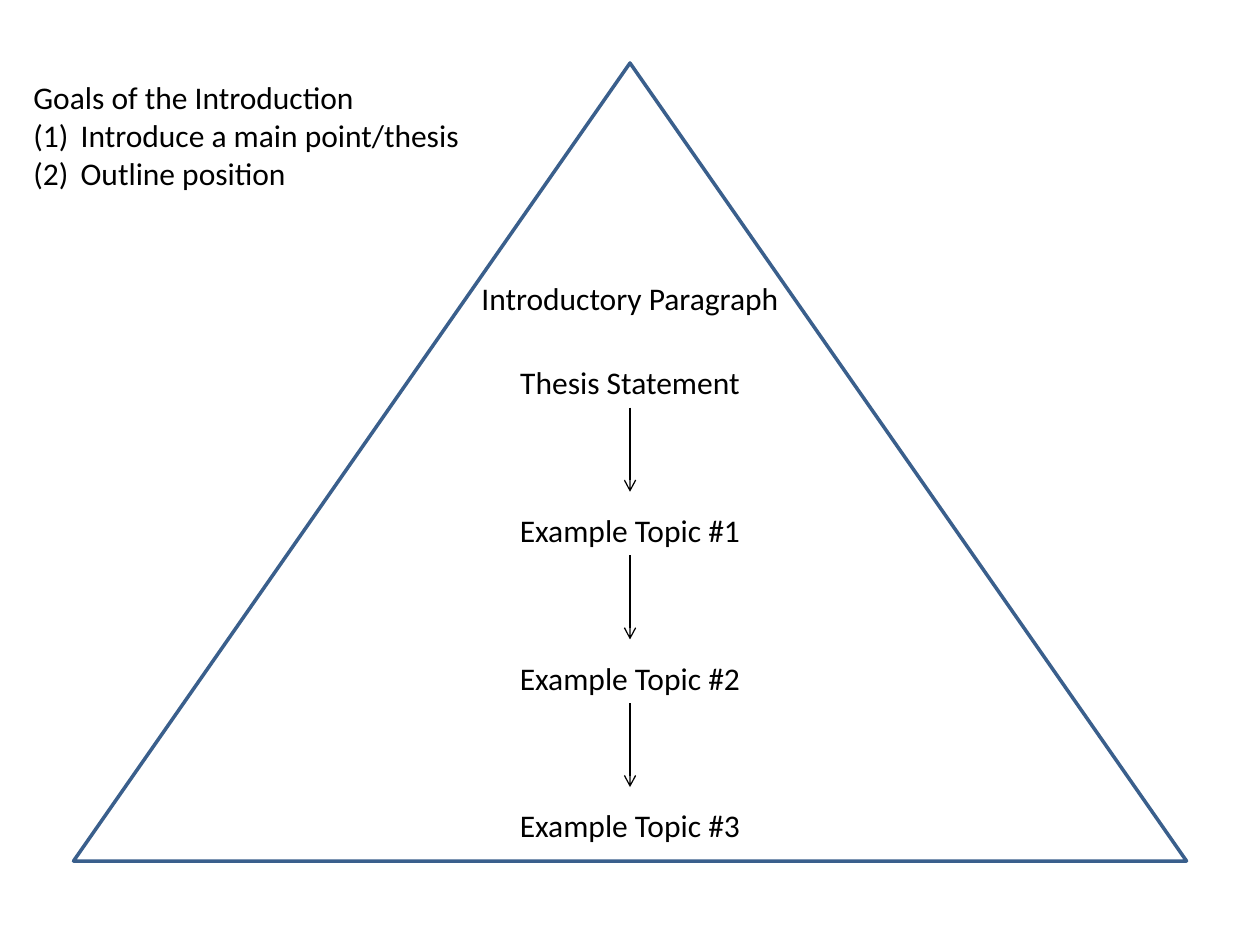
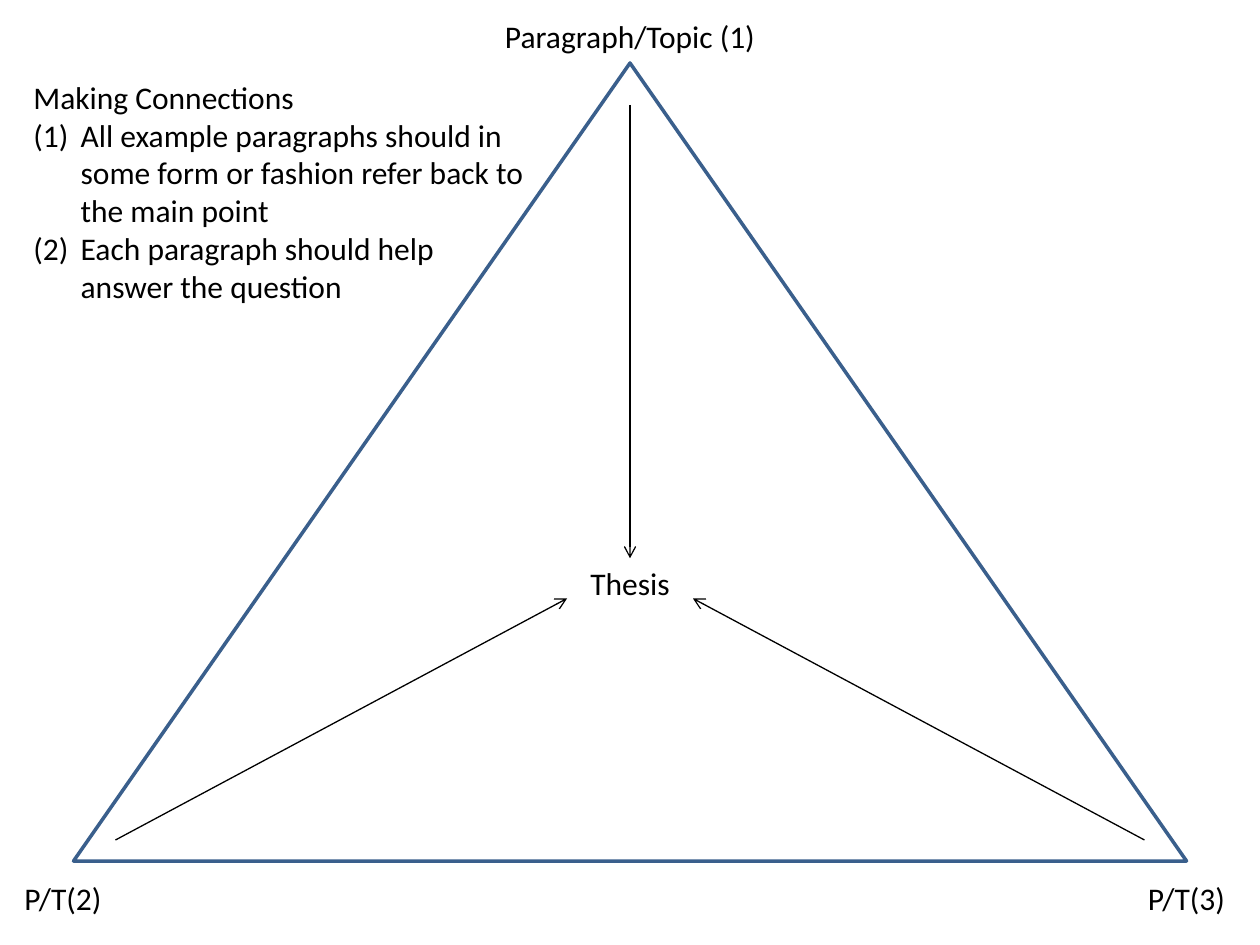
from dataclasses import dataclass

from lxml.etree import SubElement
from pptx import Presentation
from pptx.dml.color import RGBColor
from pptx.enum.shapes import MSO_CONNECTOR, MSO_SHAPE
from pptx.enum.text import MSO_AUTO_SIZE, PP_ALIGN
from pptx.oxml.ns import qn
from pptx.shapes.autoshape import Shape
from pptx.shapes.connector import Connector
from pptx.slide import Slide
from pptx.util import Pt


@dataclass(frozen=True)
class Theme:
    font: str = "Calibri"
    size: float = 18
    ink: RGBColor = RGBColor(0x00, 0x00, 0x00)
    outline: RGBColor = RGBColor(0x3A, 0x5F, 0x8C)
    outline_width: float = 2
    arrow_width: float = 0.75
    number_indent: float = 27


@dataclass(frozen=True)
class Label:
    text: str
    centre: float
    top: float
    width: float


@dataclass(frozen=True)
class Notes:
    heading: str
    points: tuple[str, ...]
    width: float
    height: float


THEME = Theme()
WIDTH, HEIGHT = 720, 540
CENTRE = WIDTH / 2
LABEL_HEIGHT = 29
TOP_SIDE, BOTTOM_SIDE = 0, 2

# Slide 1: steps down the middle of the triangle
STEPS = ("Thesis Statement", "Example Topic #1", "Example Topic #2", "Example Topic #3")
STEP_TOP, STEP_GAP, STEP_WIDTH = 204, 84.4, 228
STEP_ARROW = 48
INTRO = Label("Introductory Paragraph", CENTRE, 156, STEP_WIDTH)
GOALS = Notes("Goals of the Introduction",
              ("Introduce a main point/thesis", "Outline position"), 276, 73)

# Slide 2: corners pointing at the thesis
THESIS = Label("Thesis", CENTRE, 319, 96)
CORNERS = (
    Label("Paragraph/Topic (1)", CENTRE, 6, 204),
    Label("P/T(2)", 36, 499, 72),
    Label("P/T(3)", 678, 498.5, 72),
)
CONNECTIONS = Notes("Making Connections",
                    ("All example paragraphs should in some form or fashion "
                     "refer back to the main point",
                     "Each paragraph should help answer the question"), 300, 138)


def add_text(s: Slide, paragraphs: tuple[str, ...], left: float, top: float,
             width: float, height: float, *, align: PP_ALIGN = PP_ALIGN.LEFT,
             numbered_from: int | None = None) -> Shape:
    """Add a text box; paragraphs from index numbered_from on are numbered."""
    sp = s.shapes.add_textbox(Pt(left), Pt(top), Pt(width), Pt(height))
    tf = sp.text_frame
    tf.word_wrap = True
    tf.auto_size = MSO_AUTO_SIZE.SHAPE_TO_FIT_TEXT
    for i, text in enumerate(paragraphs):
        p = tf.paragraphs[0] if i == 0 else tf.add_paragraph()
        p.alignment = align
        r = p.add_run()
        r.text = text
        r.font.name = THEME.font
        r.font.size = Pt(THEME.size)
        r.font.color.rgb = THEME.ink
        if numbered_from is not None and i >= numbered_from:
            pPr = p._p.get_or_add_pPr()
            pPr.set("marL", str(Pt(THEME.number_indent)))
            pPr.set("indent", str(-Pt(THEME.number_indent)))
            SubElement(pPr, qn("a:buFont"), typeface="+mj-lt")
            SubElement(pPr, qn("a:buAutoNum"), type="arabicParenBoth")
    return sp


def add_label(s: Slide, label: Label) -> Shape:
    return add_text(s, (label.text,), label.centre - label.width / 2, label.top,
                    label.width, LABEL_HEIGHT, align=PP_ALIGN.CENTER)


def add_notes(s: Slide, notes: Notes) -> Shape:
    return add_text(s, (notes.heading, *notes.points), 12, 41,
                    notes.width, notes.height, numbered_from=1)


def add_arrow(s: Slide, x1: float, y1: float, x2: float, y2: float) -> Connector:
    line = s.shapes.add_connector(MSO_CONNECTOR.STRAIGHT, Pt(x1), Pt(y1), Pt(x2), Pt(y2))
    line.line.color.rgb = THEME.ink
    line.line.width = Pt(THEME.arrow_width)
    SubElement(line.line._get_or_add_ln(), qn("a:tailEnd"), type="arrow")
    SubElement(line._element.spPr, qn("a:effectLst"))
    return line


def add_triangle_slide(prs: Presentation) -> Slide:
    """Add a blank slide with the large triangle that both slides share."""
    s = prs.slides.add_slide(prs.slide_layouts[6])
    sp = s.shapes.add_shape(MSO_SHAPE.ISOSCELES_TRIANGLE, Pt(42), Pt(36), Pt(636), Pt(456))
    sp.shadow.inherit = False
    sp.fill.background()
    sp.line.color.rgb = THEME.outline
    sp.line.width = Pt(THEME.outline_width)
    return s


def build_introduction(prs: Presentation) -> None:
    s = add_triangle_slide(prs)
    add_label(s, INTRO)
    for i, text in enumerate(STEPS):
        top = STEP_TOP + i * STEP_GAP
        step = add_label(s, Label(text, CENTRE, top, STEP_WIDTH))
        if i < len(STEPS) - 1:
            bottom = top + LABEL_HEIGHT
            arrow = add_arrow(s, CENTRE, bottom, CENTRE, bottom + STEP_ARROW)
            arrow.begin_connect(step, BOTTOM_SIDE)
    add_notes(s, GOALS)


def build_connections(prs: Presentation) -> None:
    s = add_triangle_slide(prs)
    thesis = add_label(s, THESIS)
    for corner in CORNERS:
        add_label(s, corner)
    # Arrows from the three corners
    add_arrow(s, CENTRE, 60, CENTRE, THESIS.top).end_connect(thesis, TOP_SIDE)
    for side in (-1, 1):
        add_arrow(s, CENTRE + side * 294, 480, CENTRE + side * 36, 342)
    add_notes(s, CONNECTIONS)


def main() -> None:
    prs = Presentation()
    prs.slide_width, prs.slide_height = Pt(WIDTH), Pt(HEIGHT)
    build_introduction(prs)
    build_connections(prs)
    prs.save("out.pptx")


if __name__ == "__main__":
    main()
